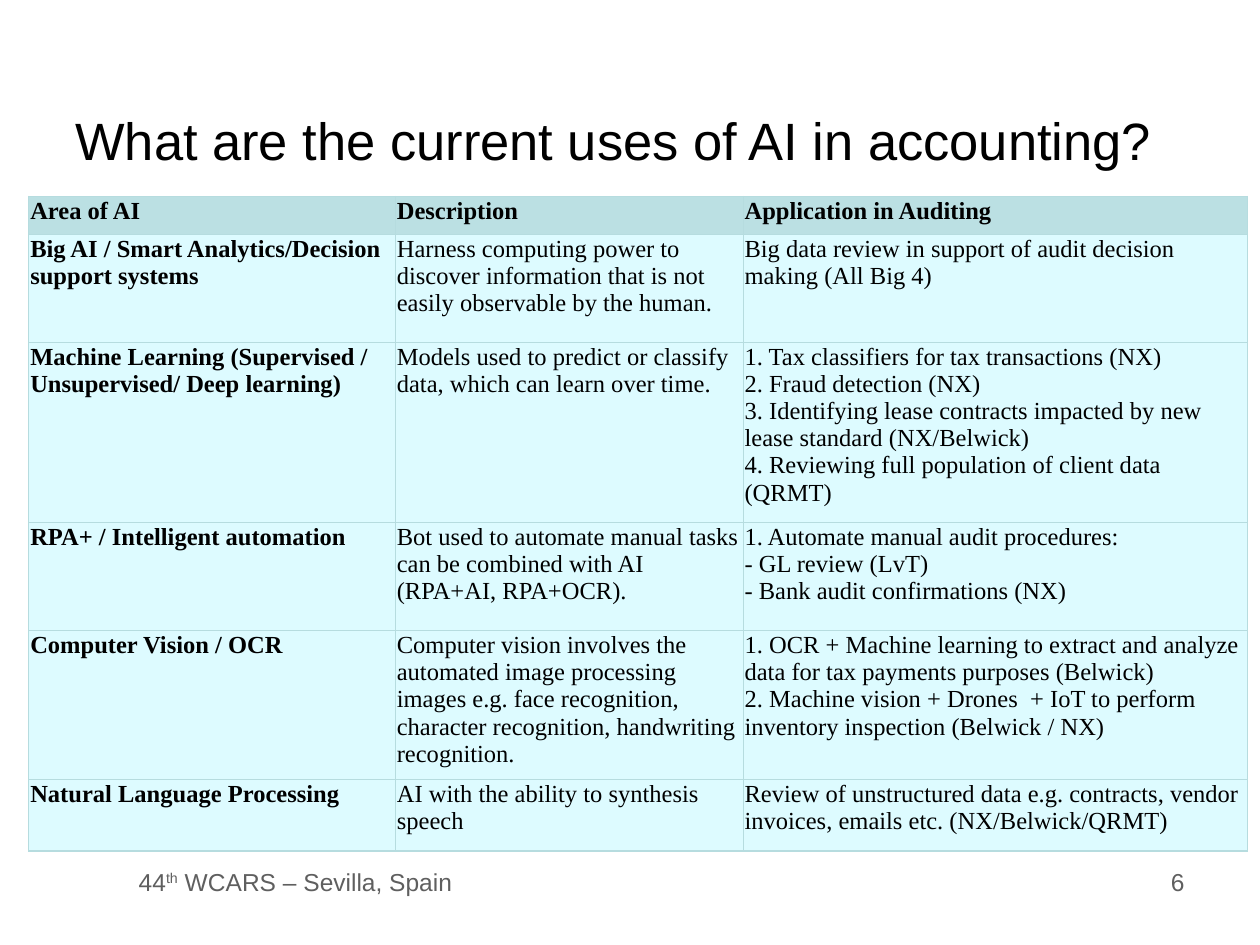
from dataclasses import dataclass

from lxml import etree
from pptx import Presentation
from pptx import util as u
from pptx.dml.color import RGBColor
from pptx.enum import text
from pptx.oxml.ns import qn

BORDER, HEAD, BODY = "B6DCDF", "BBE0E3", "DDFBFF"
BLACK, GREY = "000000", "5F5F5F"
COLS = (7.39, 7.01, 10.16)


@dataclass
class Label:
    box: tuple[float, float, float, float]
    texts: tuple[str, ...]
    size: int
    color: str
    align: text.PP_ALIGN
    anchor: text.MSO_ANCHOR


@dataclass
class Row:
    height: float
    cells: tuple[str, str, str]


LABELS = [
    Label((1.98, 17.35, 7.39, 1.32), ("44", "th", " WCARS – Sevilla, Spain"),
          14, GREY, text.PP_ALIGN.RIGHT, text.MSO_ANCHOR.TOP),
    Label((1.27, 1.7, 22.86, 2.24), ("What are the current uses of AI in accounting?",),
          30, BLACK, text.PP_ALIGN.LEFT, text.MSO_ANCHOR.MIDDLE),
    Label((18.21, 17.35, 5.92, 1.32), ("6",),
          14, GREY, text.PP_ALIGN.RIGHT, text.MSO_ANCHOR.TOP),
]

ROWS = [
    Row(0.76, ("Area of AI", "Description", "Application in Auditing")),
    Row(2.18, (
        "Big AI / Smart Analytics/Decision support systems",
        "Harness computing power to discover information that is not easily "
        "observable by the human.",
        "Big data review in support of audit decision making (All Big 4)")),
    Row(3.63, (
        "Machine Learning (Supervised / Unsupervised/ Deep learning)",
        "Models used to predict or classify data, which can learn over time.",
        "1. Tax classifiers for tax transactions (NX)\n"
        "2. Fraud detection (NX)\n"
        "3. Identifying lease contracts impacted by new lease standard (NX/Belwick)\n"
        "4. Reviewing full population of client data (QRMT)")),
    Row(2.18, (
        "RPA+ / Intelligent automation",
        "Bot used to automate manual tasks can be combined with AI (RPA+AI, RPA+OCR).",
        "1. Automate manual audit procedures:\n"
        "- GL review (LvT)\n"
        "- Bank audit confirmations (NX)")),
    Row(2.92, (
        "Computer Vision / OCR",
        "Computer vision involves the automated image processing images e.g. face "
        "recognition, character recognition, handwriting recognition.",
        "1. OCR + Machine learning to extract and analyze data for tax payments "
        "purposes (Belwick)\n"
        "2. Machine vision + Drones  + IoT to perform inventory inspection "
        "(Belwick / NX)")),
    Row(1.45, (
        "Natural Language Processing",
        "AI with the ability to synthesis speech",
        "Review of unstructured data e.g. contracts, vendor invoices, emails etc. "
        "(NX/Belwick/QRMT)")),
]


def rgb(value: str) -> RGBColor:
    return RGBColor.from_string(value)


def set_attrs(obj, formats: dict) -> None:
    for name, value in formats.items():
        setattr(obj, name, value)


def style_run(r, name: str, size: int, color: str, bold: bool = False) -> None:
    set_attrs(r.font, {"name": name, "size": u.Pt(size), "bold": bold})
    r.font.color.rgb = rgb(color)


def add_label(s, label: Label) -> None:
    tf = s.shapes.add_textbox(*map(u.Cm, label.box)).text_frame
    set_attrs(tf, {"word_wrap": True, "vertical_anchor": label.anchor})
    p = tf.paragraphs[0]
    p.alignment = label.align
    for value in label.texts:
        r = p.add_run()
        r.text = value
        style_run(r, "Arial", label.size, label.color)
        if value == "th":
            r.font._element.set("baseline", "30000")


def add_borders(cell) -> None:
    tc_pr = cell._tc.get_or_add_tcPr()
    for i, side in enumerate(("a:lnL", "a:lnR", "a:lnT", "a:lnB")):
        ln = etree.Element(qn(side), w=str(u.Pt(0.75)))
        fill = etree.SubElement(ln, qn("a:solidFill"))
        etree.SubElement(fill, qn("a:srgbClr"), val=BORDER)
        tc_pr.insert(i, ln)


def fill_cell(cell, value: str, fill: str, bold: bool) -> None:
    inset = u.Cm(0.03)
    set_attrs(cell, {"margin_left": inset, "margin_right": inset,
                     "margin_top": inset, "margin_bottom": 0})
    cell.text_frame.text = value
    for p in cell.text_frame.paragraphs:
        for r in p.runs:
            style_run(r, "Times New Roman", 14, BLACK, bold)
    cell.fill.solid()
    cell.fill.fore_color.rgb = rgb(fill)
    add_borders(cell)


def add_uses_table(s, rows: list[Row]) -> None:
    height = sum(row.height for row in rows)
    box = (0.58, 3.96, sum(COLS), height)
    table = s.shapes.add_table(len(rows), len(COLS), *map(u.Cm, box)).table
    for col, width in zip(table.columns, COLS):
        col.width = u.Cm(width)
    for i, row in enumerate(rows):
        table.rows[i].height = u.Cm(row.height)
        for j, value in enumerate(row.cells):
            fill_cell(table.cell(i, j), value, BODY if i else HEAD, i == 0 or j == 0)


def main() -> None:
    prs = Presentation()
    set_attrs(prs, {"slide_width": u.Cm(25.4), "slide_height": u.Cm(19.05)})
    s = prs.slides.add_slide(prs.slide_layouts[6])
    for label in LABELS:
        add_label(s, label)
    add_uses_table(s, ROWS)
    prs.save("out.pptx")


if __name__ == "__main__":
    main()
